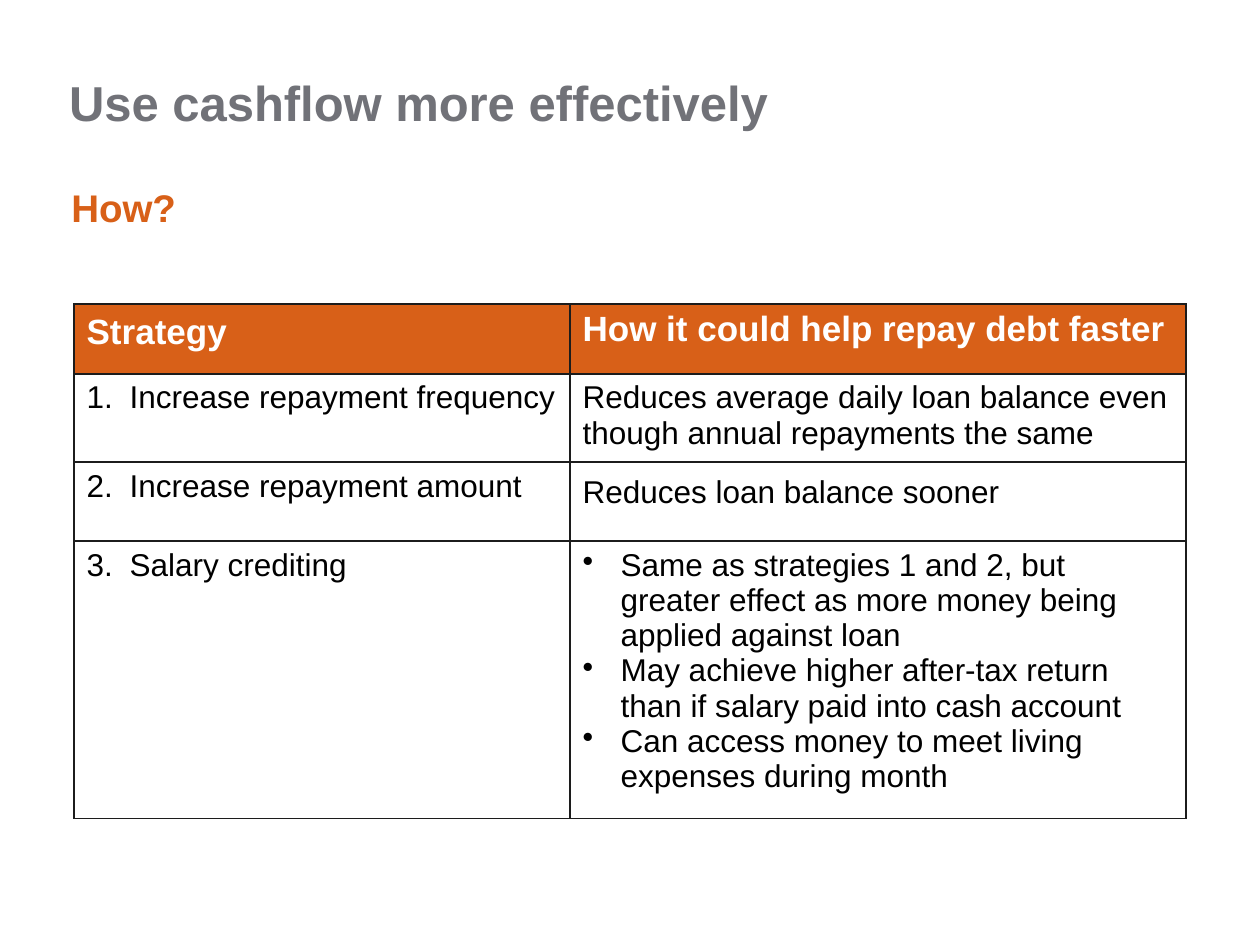
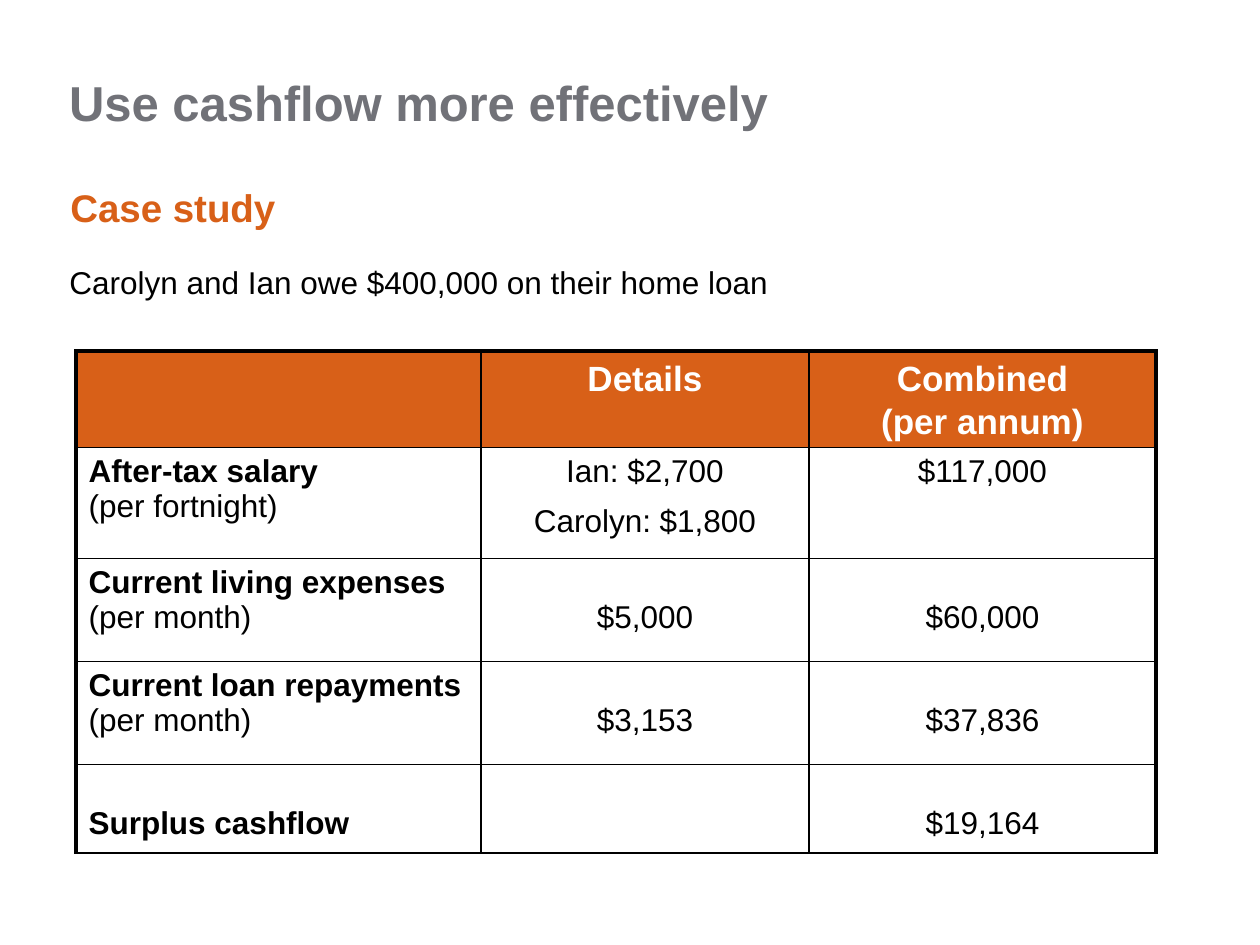
from itertools import product

from lxml import etree
from pptx import Presentation
from pptx.dml.color import RGBColor
from pptx.enum.text import PP_ALIGN
from pptx.oxml.ns import qn
from pptx.util import Pt

PX = 914400 / 126
LEFT, CENTER = PP_ALIGN.LEFT, PP_ALIGN.CENTER

THEME = {
    "font": "Arial",
    "orange": "D86018",
    "grey": "717278",
    "black": "000000",
    "charcoal": "1C1C1C",
    "white": "FFFFFF",
    "title": 28,
    "subtitle": 22,
    "header": 20,
    "body": 18,
    "thin": 1,
    "thick": 2.25,
}

SPACED = {"line_spacing": Pt(24), "space_after": Pt(10)}
AFTER = {"space_after": Pt(8.5)}
DOUBLE = {"line_spacing": 2.0, **AFTER}
MIDDLE = {"alignment": CENTER}

STYLES = {
    "title": ("title", "grey", (True,), {}),
    "subtitle": ("subtitle", "orange", (True,), {}),
    "intro": ("body", "black", (False,), {"line_spacing": 0.9, "space_after": Pt(10)}),
    "header": ("header", "white", (True, True), SPACED),
    "header tight": ("header", "white", (True,), {}),
    "header middle": ("header", "white", (True, True), {**SPACED, **MIDDLE}),
    "plain": ("body", "black", (False,), {}),
    "plain spaced": ("body", "black", (False,), SPACED),
    "number": ("body", "black", (False,), {}),
    "bullet": ("body", "black", (False,), {}),
    "label": ("body", "black", (True, False), AFTER),
    "label low": ("body", "black", (True,), DOUBLE),
    "amount": ("body", "black", (False,), {**AFTER, **MIDDLE}),
    "amount low": ("body", "black", (False,), {**DOUBLE, **MIDDLE}),
}
HANGING = {"number": 43, "bullet": 38}


def write(frame, style, texts):
    size, color, bolds, formats = STYLES[style]
    for number, text in enumerate(texts):
        paragraph = frame.add_paragraph() if number else frame.paragraphs[0]
        for name, value in {"alignment": LEFT, **formats}.items():
            setattr(paragraph, name, value)
        if style in HANGING:
            indent = round(HANGING[style] * PX)
            properties = paragraph._p.get_or_add_pPr()
            properties.set("marL", str(indent))
            properties.set("indent", str(-indent))
            if style == "bullet":
                etree.SubElement(properties, qn("a:buChar"), char="•")
        for line, (words, bold) in enumerate(zip(text.split("\n"), bolds)):
            if line:
                paragraph.add_line_break()
            run = paragraph.add_run()
            run.text = words
            font_values = {"name": THEME["font"], "size": Pt(THEME[size]), "bold": bold}
            for name, value in font_values.items():
                setattr(run.font, name, value)
            run.font.color.rgb = RGBColor.from_string(THEME[color])


def add_border(cell, side, width, color):
    line = etree.SubElement(cell._tc.get_or_add_tcPr(), qn(f"a:ln{side}"), w=str(Pt(width)))
    fill = etree.SubElement(line, qn("a:solidFill"))
    etree.SubElement(fill, qn("a:srgbClr"), val=color)


SLIDES = [
    {
        "texts": [("subtitle", "How?", (59, 178, 130, 59), False)],
        "place": (74, 304),
        "columns": [496, 616],
        "rows": [70, 88, 79, 277],
        "border": "charcoal",
        "frame": "thin",
        "cells": [
            [("header", ["Strategy"]),
             ("header tight", ["How it could help repay debt faster"])],
            [("number", ["1.\tIncrease repayment frequency"]),
             ("plain", ["Reduces average daily loan balance even though annual repayments the same"])],
            [("number", ["2.\tIncrease repayment amount"]),
             ("plain spaced", ["Reduces loan balance sooner"])],
            [("number", ["3.\tSalary crediting"]),
             ("bullet", [
                 "Same as strategies 1 and 2, but greater effect as more money being applied against loan",
                 "May achieve higher after-tax return than if salary paid into cash account",
                 "Can access money to meet living expenses during month",
             ])],
        ],
    },
    {
        "texts": [
            ("intro", "Carolyn and Ian owe $400,000 on their home loan", (57, 261, 953, 129), True),
            ("subtitle", "Case study", (58, 178, 232, 59), False),
        ],
        "place": (76, 351),
        "columns": [405, 328, 347],
        "rows": [96, 111, 103, 103, 87],
        "border": "black",
        "frame": "thick",
        "cells": [
            [("header", []), ("header middle", ["Details"]),
             ("header middle", ["Combined\n(per annum)"])],
            [("label", ["After-tax salary\n(per fortnight)"]),
             ("amount", ["Ian: $2,700", "Carolyn: $1,800"]), ("amount", ["$117,000"])],
            [("label", ["Current living expenses\n(per month)"]),
             ("amount low", ["$5,000"]), ("amount low", ["$60,000"])],
            [("label", ["Current loan repayments\n(per month)"]),
             ("amount low", ["$3,153"]), ("amount low", ["$37,836"])],
            [("label low", ["Surplus cashflow"]), ("amount low", []),
             ("amount low", ["$19,164"])],
        ],
    },
]

presentation = Presentation()
presentation.slide_width = round(1260 * PX)
presentation.slide_height = round(945 * PX)

for content in SLIDES:
    slide = presentation.slides.add_slide(presentation.slide_layouts[6])

    title = slide.shapes.add_textbox(*(round(n * PX) for n in (69, 67, 990, 50))).text_frame
    margins = {"margin_left": 0, "margin_right": 0, "margin_top": round(6 * PX), "margin_bottom": 0}
    for name, value in {"word_wrap": True, **margins}.items():
        setattr(title, name, value)
    write(title, "title", ["Use cashflow more effectively"])

    for style, text, box, wrap in content["texts"]:
        frame = slide.shapes.add_textbox(*(round(n * PX) for n in box)).text_frame
        frame.word_wrap = wrap
        write(frame, style, [text])

    columns, rows = content["columns"], content["rows"]
    area = (*content["place"], sum(columns), sum(rows))
    table = slide.shapes.add_table(len(rows), len(columns), *(round(n * PX) for n in area)).table
    table.first_row = table.horz_banding = False
    for column, width in zip(table.columns, columns):
        column.width = round(width * PX)
    for row, height in zip(table.rows, rows):
        row.height = round(height * PX)

    for r, c in product(range(len(rows)), range(len(columns))):
        cell = table.cell(r, c)
        outer = {"L": c == 0, "R": c == len(columns) - 1, "T": r == 0, "B": False}
        for side, on_frame in outer.items():
            width = THEME[content["frame"] if on_frame else "thin"]
            add_border(cell, side, width, THEME[content["border"]])
        cell.fill.solid()
        cell.fill.fore_color.rgb = RGBColor.from_string(THEME["white" if r else "orange"])
        write(cell.text_frame, *content["cells"][r][c])

presentation.save("out.pptx")
